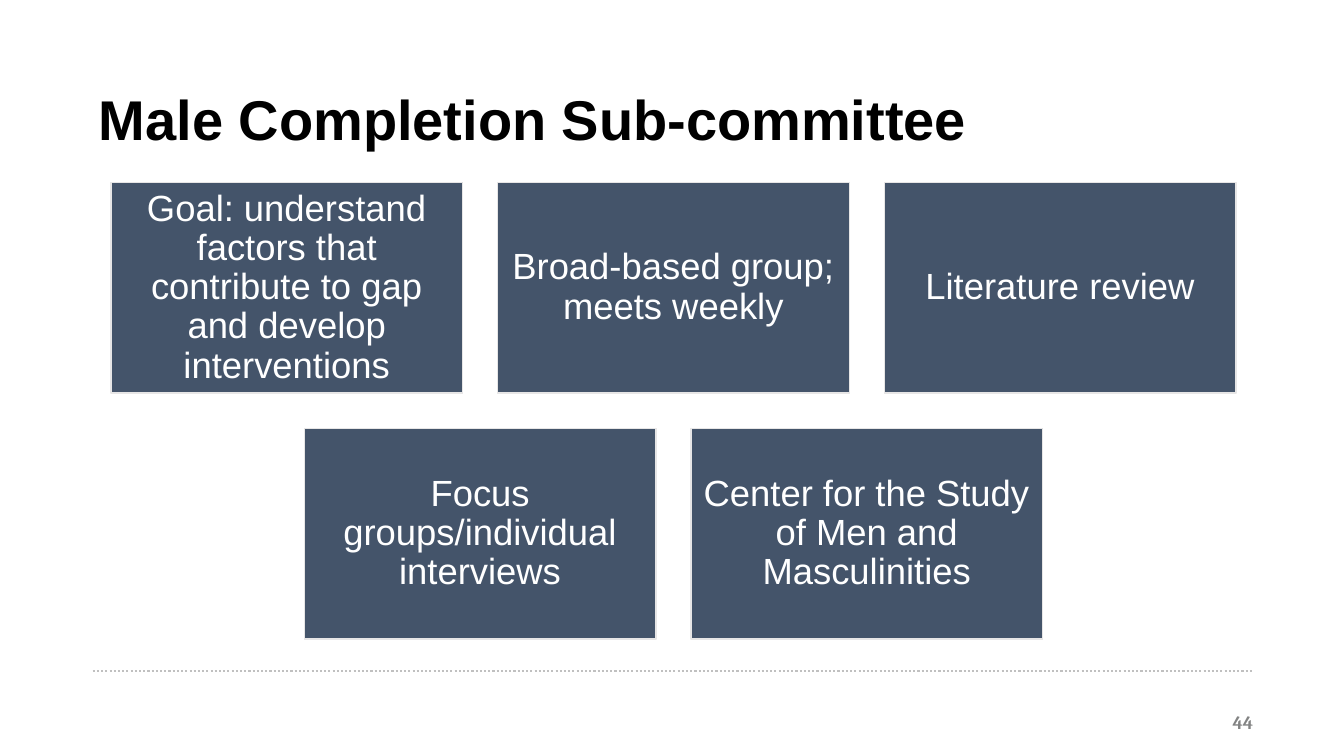
from lxml.etree import SubElement
from pptx import Presentation
from pptx.dml.color import RGBColor
from pptx.enum.dml import MSO_LINE
from pptx.enum.shapes import MSO_CONNECTOR, MSO_SHAPE
from pptx.enum.text import MSO_ANCHOR as ANCHOR, MSO_AUTO_SIZE, PP_ALIGN as ALIGN
from pptx.oxml.ns import qn
from pptx.util import Inches, Pt

SLIDE_W, SLIDE_H = 13.33, 7.5
CARD_W, CARD_H = 3.49, 2.09
PITCH_X, PITCH_Y = 3.835, 2.44
CARDS_CENTER, CARDS_TOP = 6.68, 1.81
CARD_ROWS = [
    ["Goal: understand factors that contribute to gap and develop interventions",
     "Broad-based group;\vmeets weekly",
     "Literature review"],
    ["Focus groups/individual interviews",
     "Center for the Study of Men and Masculinities"],
]


def rgb(color):
    return RGBColor.from_string(color)


def write(shape, text, size, color, font="Arial", bold=False, align=ALIGN.CENTER,
          spacing=1.0, margins=(0.1, 0.05)):
    tf = shape.text_frame
    tf.word_wrap = True
    tf.auto_size = MSO_AUTO_SIZE.NONE
    tf.vertical_anchor = ANCHOR.MIDDLE
    tf.margin_left = tf.margin_right = Inches(margins[0])
    tf.margin_top = tf.margin_bottom = Inches(margins[1])
    p = tf.paragraphs[0]
    p.text = text
    p.alignment = align
    p.line_spacing = spacing
    p.font.name = font
    p.font.size = Pt(size)
    p.font.bold = bold
    p.font.color.rgb = rgb(color)


def add_title(s, text):
    title = s.shapes.title
    title.left, title.top = Inches(0.88), Inches(0.85)
    title.width, title.height = Inches(11.49), Inches(0.77)
    write(title, text, 40, "000000", bold=True, align=ALIGN.LEFT, spacing=0.8)


def add_card(s, left, top, text):
    card = s.shapes.add_shape(MSO_SHAPE.RECTANGLE, Inches(left), Inches(top),
                              Inches(CARD_W), Inches(CARD_H))
    card.shadow.inherit = False
    card.fill.solid()
    card.fill.fore_color.rgb = rgb("44546A")
    card.line.color.rgb = rgb("E7E6E6")
    card.line.width = Pt(1)
    write(card, text, 26, "FFFFFF", spacing=0.9, margins=(0.11, 0.11))


def add_cards(s):
    """Place each row of cards centred on the same axis."""
    for row, texts in enumerate(CARD_ROWS):
        left = CARDS_CENTER - ((len(texts) - 1) * PITCH_X + CARD_W) / 2
        for col, text in enumerate(texts):
            add_card(s, left + col * PITCH_X, CARDS_TOP + row * PITCH_Y, text)


def add_footer(s, number):
    rule = s.shapes.add_connector(MSO_CONNECTOR.STRAIGHT, Inches(0.92), Inches(6.66),
                                  Inches(12.42), Inches(6.66))
    rule.line.color.rgb = rgb("C0C0C0")
    rule.line.width = Pt(1.5)
    rule.line.dash_style = MSO_LINE.ROUND_DOT
    SubElement(rule._element.spPr, qn("a:effectLst"))
    box = s.shapes.add_textbox(Inches(9.56), Inches(6.96), Inches(3), Inches(0.4))
    write(box, number, 13.3, "828383", font="Cambria", bold=True, align=ALIGN.RIGHT,
          margins=(0.13, 0.07))


def main():
    prs = Presentation()
    prs.slide_width, prs.slide_height = Inches(SLIDE_W), Inches(SLIDE_H)
    s = prs.slides.add_slide(prs.slide_layouts[5])
    add_footer(s, "44")
    add_title(s, "Male Completion Sub-committee")
    add_cards(s)
    prs.save("out.pptx")


if __name__ == "__main__":
    main()
